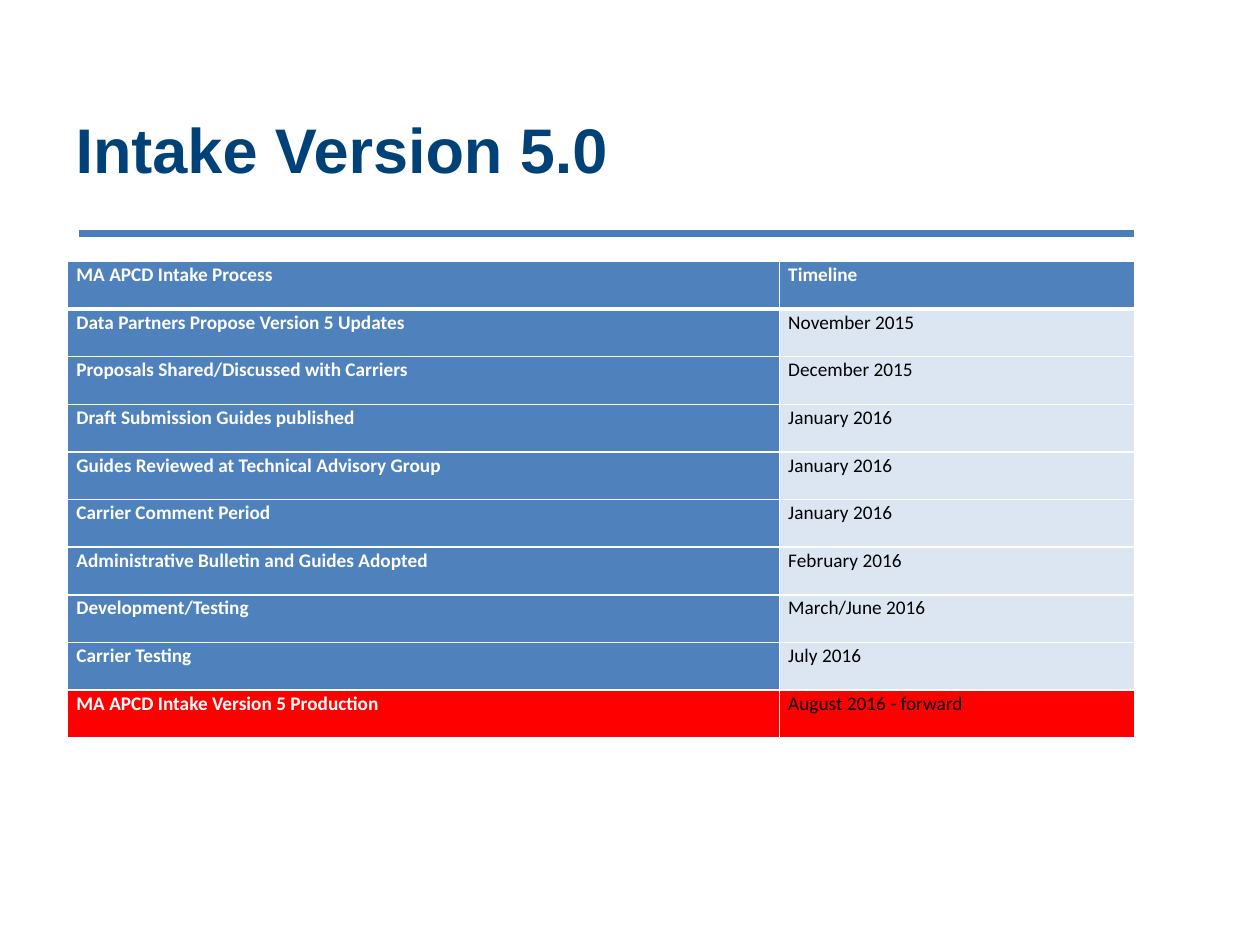
from lxml import etree
from pptx import Presentation
from pptx.dml.color import RGBColor
from pptx.enum.shapes import MSO_CONNECTOR
from pptx.enum.text import MSO_ANCHOR, MSO_AUTO_SIZE, PP_ALIGN
from pptx.oxml.ns import qn
from pptx.util import Cm, Pt

STRAIGHT = MSO_CONNECTOR.STRAIGHT
MIDDLE, TOP = MSO_ANCHOR.MIDDLE, MSO_ANCHOR.TOP
NO_FIT = MSO_AUTO_SIZE.NONE
LEFT = PP_ALIGN.LEFT

HEADER = ("MA APCD Intake Process", "Timeline")
STEPS = [
    ("Data Partners Propose Version 5 Updates", "November 2015"),
    ("Proposals Shared/Discussed with Carriers", "December 2015"),
    ("Draft Submission Guides published", "January 2016"),
    ("Guides Reviewed at Technical Advisory Group", "January 2016"),
    ("Carrier Comment Period", "January 2016"),
    ("Administrative Bulletin and Guides Adopted", "February 2016"),
    ("Development/Testing", "March/June 2016"),
    ("Carrier Testing", "July 2016"),
    ("MA APCD Intake Version 5 Production", "August 2016 - forward"),
]


def color(value):
    return RGBColor.from_string(value)


def apply(target, values):
    for name, value in values.items():
        setattr(target, name, value)


class TimelineSlide:
    NAVY, RULE = "004178", "4B7EBC"
    BLUE, PALE, RED = "4F81BD", "DCE6F2", "FF0000"
    WHITE, BLACK = "FFFFFF", "000000"
    TITLE_FONT = {"name": "Arial", "size": Pt(36), "bold": True}
    CELL_FONT = {"name": "Calibri", "size": Pt(11)}
    CELL_FORMAT = {
        "margin_left": Cm(0.18), "margin_right": Cm(0.18),
        "margin_top": 0, "margin_bottom": 0, "vertical_anchor": TOP,
    }

    def __init__(self, slide):
        self.slide = slide

    def set_font(self, paragraph, values, hex_color):
        apply(paragraph.font, values)
        paragraph.font.color.rgb = color(hex_color)

    def title(self, text, left, top, width, height):
        heading = self.slide.shapes.title
        apply(heading, {"left": Cm(left), "top": Cm(top),
                        "width": Cm(width), "height": Cm(height)})
        frame = heading.text_frame
        apply(frame, {"text": text, "word_wrap": True,
                      "auto_size": NO_FIT, "vertical_anchor": MIDDLE})
        paragraph = frame.paragraphs[0]
        paragraph.alignment = LEFT
        self.set_font(paragraph, self.TITLE_FONT, self.NAVY)

    def rule(self, left, right, y, weight):
        rule = self.slide.shapes.add_connector(
            STRAIGHT, Cm(left), Cm(y), Cm(right), Cm(y))
        rule.line.color.rgb = color(self.RULE)
        rule.line.width = Pt(weight)
        etree.SubElement(rule._element.spPr, qn("a:effectLst"))

    def borders(self, cell, weights):
        properties = cell._tc.get_or_add_tcPr()
        for side, weight in weights.items():
            border = etree.SubElement(
                properties, qn(f"a:ln{side}"), w=str(Pt(weight)))
            fill = etree.SubElement(border, qn("a:solidFill"))
            etree.SubElement(fill, qn("a:srgbClr"), val=self.WHITE)

    def cell(self, cell, text, fill, text_color, bold, weights):
        apply(cell, self.CELL_FORMAT)
        self.borders(cell, weights)
        cell.fill.solid()
        cell.fill.fore_color.rgb = color(fill)
        cell.text = text
        paragraph = cell.text_frame.paragraphs[0]
        paragraph.line_spacing = 1.07
        self.set_font(paragraph, {**self.CELL_FONT, "bold": bold}, text_color)

    def table(self, rows, left, top, widths, row_height):
        table = self.slide.shapes.add_table(
            len(rows), len(widths), Cm(left), Cm(top),
            Cm(sum(widths)), Cm(row_height * len(rows))).table
        for column, width in zip(table.columns, widths):
            column.width = Cm(width)
        last = len(rows) - 1
        for r, row in enumerate(rows):
            table.rows[r].height = Cm(row_height)
            weights = {"L": 1, "R": 1, "T": 3 if r == 1 else 1,
                       "B": 3 if r == 0 else 1}
            for c, text in enumerate(row):
                strong = r == 0 or c == 0
                fill = self.BLUE if strong else self.PALE
                self.cell(table.cell(r, c), text,
                          self.RED if r == last else fill,
                          self.WHITE if strong else self.BLACK,
                          strong, weights)


def main():
    deck = Presentation()
    apply(deck, {"slide_width": Cm(25.4), "slide_height": Cm(19.05)})
    timeline = TimelineSlide(deck.slides.add_slide(deck.slide_layouts[5]))
    timeline.rule(1.6, 22.86, 4.7, 4)
    timeline.title("Intake Version 5.0", 1.27, 1.57, 21.59, 2.82)
    timeline.table([HEADER, *STEPS], 1.36, 5.27, (14.35, 7.16), 0.96)
    deck.save("out.pptx")


if __name__ == "__main__":
    main()
